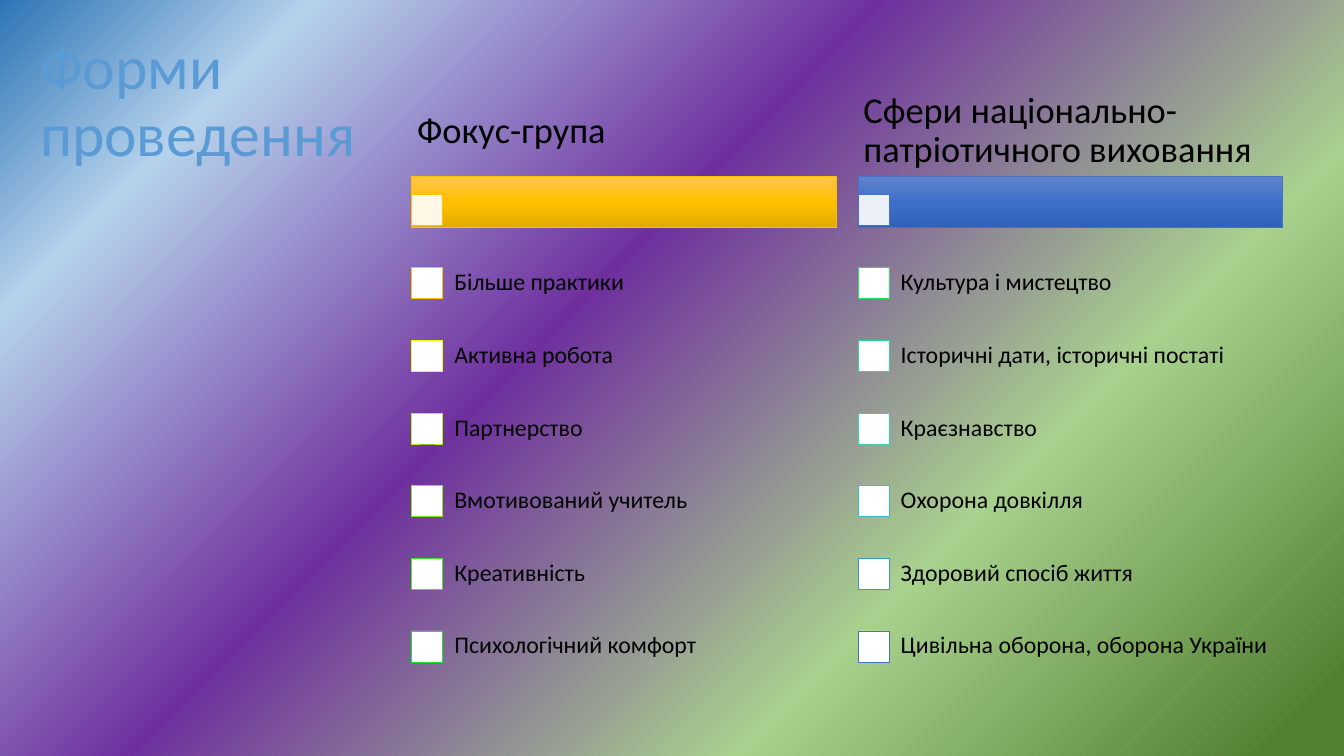
from lxml.etree import SubElement
from pptx import Presentation
from pptx.dml.color import RGBColor
from pptx.enum.shapes import MSO_SHAPE
from pptx.enum.text import MSO_ANCHOR
from pptx.oxml.ns import qn
from pptx.util import Cm, Pt

WHITE = RGBColor(0xFF, 0xFF, 0xFF)
BLACK = RGBColor(0x00, 0x00, 0x00)
SKY = RGBColor(0x5B, 0x9B, 0xD5)
GOLD = RGBColor(0xFF, 0xC0, 0x00)
BLUE = RGBColor(0x44, 0x72, 0xC4)

BACKGROUND_STOPS = [
    (4, RGBColor(0x54, 0x82, 0x35)),
    (29, RGBColor(0xA9, 0xD1, 0x8E)),
    (58, RGBColor(0x6F, 0x30, 0x9E)),
    (85, RGBColor(0xB5, 0xD2, 0xEC)),
    (100, RGBColor(0x2E, 0x75, 0xB6)),
]
GOLD_STOPS = [
    (0, RGBColor(0xFF, 0xC6, 0x4B)),
    (50, GOLD),
    (100, RGBColor(0xE3, 0xAB, 0x00)),
]
BLUE_STOPS = [
    (0, RGBColor(0x61, 0x83, 0xCB)),
    (50, RGBColor(0x3E, 0x70, 0xCA)),
    (100, RGBColor(0x30, 0x62, 0xBB)),
]

COLUMNS = [
    ("Фокус-група", GOLD, GOLD_STOPS, [
        ("Більше практики", GOLD),
        ("Активна робота", RGBColor(0xF6, 0xF9, 0x06)),
        ("Партнерство", RGBColor(0xB4, 0xF4, 0x0D)),
        ("Вмотивований учитель", RGBColor(0x78, 0xEE, 0x13)),
        ("Креативність", RGBColor(0x42, 0xE9, 0x19)),
        ("Психологічний комфорт", RGBColor(0x1F, 0xE4, 0x2C)),
    ]),
    ("Сфери національно-патріотичного виховання", BLUE, BLUE_STOPS, [
        ("Культура і мистецтво", RGBColor(0x26, 0xDE, 0x62)),
        ("Історичні дати, історичні постаті", RGBColor(0x2C, 0xD9, 0x92)),
        ("Краєзнавство", RGBColor(0x32, 0xD4, 0xBC)),
        ("Охорона довкілля", RGBColor(0x38, 0xBD, 0xCE)),
        ("Здоровий спосіб життя", RGBColor(0x3E, 0x95, 0xC9)),
        ("Цивільна оборона, оборона України", BLUE),
    ]),
]

COLUMN_LEFT, COLUMN_STEP, COLUMN_WIDTH = 10.38, 11.25, 10.69
ROW_TOP, ROW_STEP = 6.22, 1.83
MARKER_SIZE, MARKER_DROP = 0.78, 0.53
ITEM_INDENT = 0.75


class SlideBuilder:
    font = "Calibri"
    line_width = Pt(0.5)
    line_spacing = 0.9

    def __init__(self, page):
        self.page = page

    def gradient(self, element, stops):
        gradient = element.find(".//" + qn("a:gradFill"))
        for child in list(gradient):
            gradient.remove(child)
        stop_list = SubElement(gradient, qn("a:gsLst"))
        for position, color in stops:
            stop = SubElement(stop_list, qn("a:gs"), pos=str(position * 1000))
            SubElement(stop, qn("a:srgbClr"), val=str(color))
        return gradient

    def background(self, stops):
        self.page.background.fill.gradient()
        gradient = self.gradient(self.page._element, stops)
        circle = SubElement(gradient, qn("a:path"), path="circle")
        SubElement(circle, qn("a:fillToRect"), l="100000", t="100000")

    def rectangle(self, left, top, width, height, line_color):
        shape = self.page.shapes.add_shape(
            MSO_SHAPE.RECTANGLE, Cm(left), Cm(top), Cm(width), Cm(height))
        shape.shadow.inherit = False
        shape.line.color.rgb = line_color
        shape.line.width = self.line_width
        return shape

    def bar(self, left, top, width, height, line_color, stops):
        shape = self.rectangle(left, top, width, height, line_color)
        shape.fill.gradient()
        gradient = self.gradient(shape._element, stops)
        SubElement(gradient, qn("a:lin"), ang="5400000", scaled="0")

    def marker(self, left, top, line_color, opacity=100):
        shape = self.rectangle(left, top, MARKER_SIZE, MARKER_SIZE, line_color)
        shape.fill.solid()
        shape.fill.fore_color.rgb = WHITE
        if opacity < 100:
            color = shape._element.spPr.find(qn("a:solidFill"))[0]
            SubElement(color, qn("a:alpha"), val=str(opacity * 1000))

    def text(self, words, left, top, width, height, size, color=BLACK,
             inset=(0.25, 0.13)):
        box = self.page.shapes.add_textbox(
            Cm(left), Cm(top), Cm(width), Cm(height))
        frame = box.text_frame
        frame.word_wrap = True
        frame.vertical_anchor = MSO_ANCHOR.MIDDLE
        frame.margin_left = frame.margin_right = Cm(inset[0])
        frame.margin_top = frame.margin_bottom = Cm(inset[1])
        para = frame.paragraphs[0]
        para.line_spacing = self.line_spacing
        span = para.add_run()
        span.text = words
        span.font.name = self.font
        span.font.size = Pt(size)
        span.font.color.rgb = color

    def column(self, left, heading, color, stops, items):
        self.bar(left, 4.45, COLUMN_WIDTH, 1.27, color, stops)
        self.marker(left, 4.91, color, opacity=90)
        self.text(heading, left, 2.18, COLUMN_WIDTH, 2.26, 26,
                  inset=(0.13, 0.1))
        for row, (words, line_color) in enumerate(items):
            top = ROW_TOP + row * ROW_STEP
            self.marker(left, top + MARKER_DROP, line_color)
            self.text(words, left + ITEM_INDENT, top,
                      COLUMN_WIDTH - ITEM_INDENT, ROW_STEP, 17,
                      inset=(0.32, 0.32))


def main():
    deck = Presentation()
    deck.slide_width, deck.slide_height = Cm(33.87), Cm(19.05)
    builder = SlideBuilder(deck.slides.add_slide(deck.slide_layouts[6]))
    builder.background(BACKGROUND_STOPS)
    builder.text("Форми проведення", 0.76, 0.76, 8.89, 3.68, 44, SKY)
    for index, column in enumerate(COLUMNS):
        builder.column(COLUMN_LEFT + index * COLUMN_STEP, *column)
    deck.save("out.pptx")


if __name__ == "__main__":
    main()
